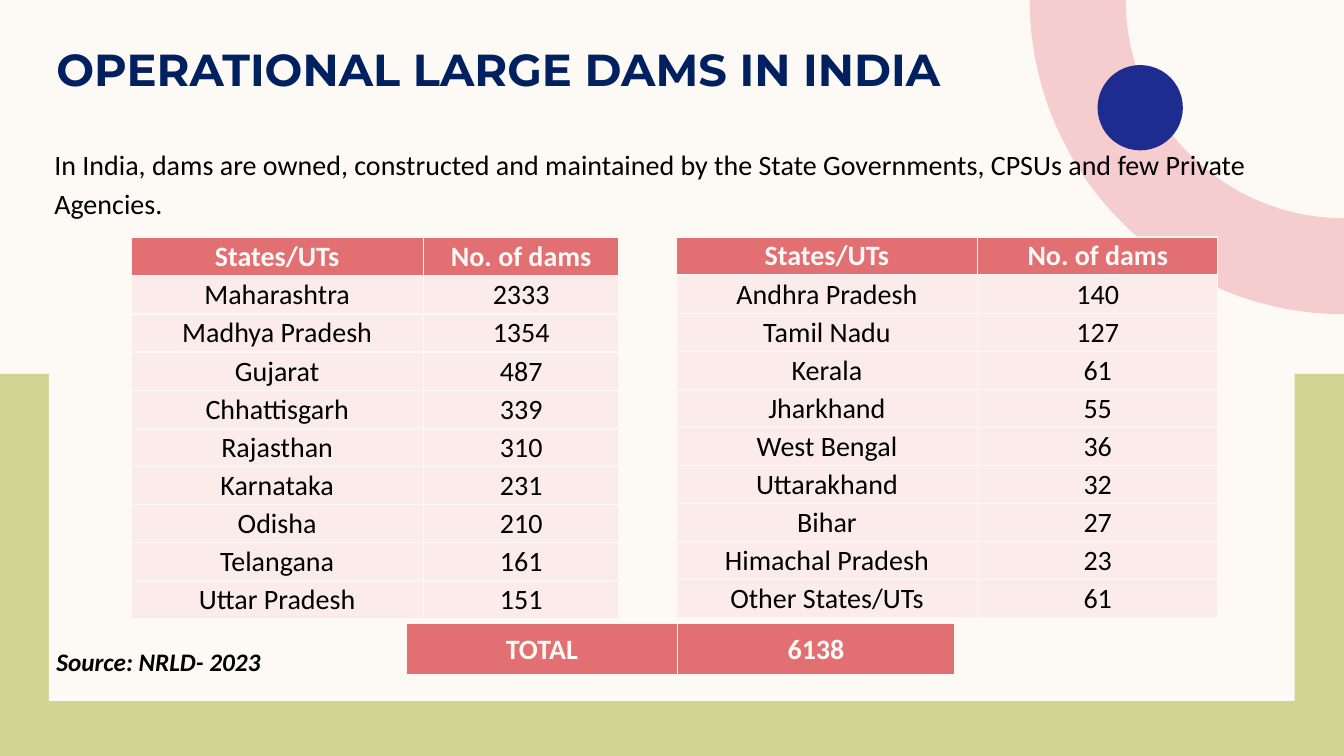
import math

from lxml import etree
from pptx import Presentation
from pptx.dml.color import RGBColor
from pptx.enum import shapes, text
from pptx.oxml import ns
from pptx.util import Cm, Pt

CREAM, CORAL, BLUSH = "FDFAF6", "E26F72", "FBEBEB"
OLIVE, PINK, BLUE, NAVY, BLACK = "D2D592", "F5CDCE", "1F2C8F", "002060", "000000"
WIDTH, HEIGHT = 33.87, 19.05
HEADINGS = ("States/UTs", "No. of dams")
LARGEST_STATES = [
    ("Maharashtra", "2333"), ("Madhya Pradesh", "1354"), ("Gujarat", "487"),
    ("Chhattisgarh", "339"), ("Rajasthan", "310"), ("Karnataka", "231"),
    ("Odisha", "210"), ("Telangana", "161"), ("Uttar Pradesh", "151"),
]
OTHER_STATES = [
    ("Andhra Pradesh", "140"), ("Tamil Nadu", "127"), ("Kerala", "61"),
    ("Jharkhand", "55"), ("West Bengal", "36"), ("Uttarakhand", "32"),
    ("Bihar", "27"), ("Himachal Pradesh", "23"), ("Other States/UTs", "61"),
]


def paint(color_format, color):
    """Fill a shape, cell, background or font with a hex colour."""
    if hasattr(color_format, "solid"):
        color_format.solid()
        color_format = color_format.fore_color
    color_format.rgb = RGBColor.from_string(color)


def finish(shape, color):
    """Give a decorative shape a flat fill without outline or shadow."""
    paint(shape.fill, color)
    shape.line.fill.background()
    shape.shadow.inherit = False


def add_preset(slide, kind, box, color):
    """Add a flat preset shape."""
    finish(slide.shapes.add_shape(kind, *map(Cm, box)), color)


def add_quarter_ring(slide, outer, inner, color):
    """Add a quarter ring centred on the top right corner of the slide."""
    def arc(radius, angles):
        return [(Cm(WIDTH - radius * math.cos(math.radians(a))),
                 Cm(radius * math.sin(math.radians(a)))) for a in angles]

    outline = arc(outer, range(0, 91, 2)) + arc(inner, range(90, -1, -2))
    ring = slide.shapes.build_freeform(*outline[0], scale=1.0)
    ring.add_line_segments(outline[1:], close=True)
    finish(ring.convert_to_shape(), color)


def style(paragraph, size, color, face="Calibri", bold=False, italic=False):
    """Set the font of a whole paragraph."""
    font = paragraph.font
    font.name, font.size, font.bold, font.italic = face, Pt(size), bold, italic
    paint(font.color, color)


def add_label(slide, box, words, size, color, spacing=1.0,
              anchor=text.MSO_ANCHOR.TOP, **font):
    """Add a wrapped text box with one paragraph."""
    frame = slide.shapes.add_textbox(*map(Cm, box)).text_frame
    frame.word_wrap = True
    frame.vertical_anchor = anchor
    paragraph = frame.paragraphs[0]
    paragraph.text = words
    paragraph.line_spacing = spacing
    style(paragraph, size, color, **font)


def add_borders(cell, color, bottom):
    """Draw the four borders of a cell."""
    properties = cell._tc.get_or_add_tcPr()
    for index, side in enumerate("LRTB"):
        border = etree.Element(ns.qn(f"a:ln{side}"),
                               w=str(Pt(bottom if side == "B" else 1)))
        fill = etree.SubElement(border, ns.qn("a:solidFill"))
        etree.SubElement(fill, ns.qn("a:srgbClr"), val=color)
        properties.insert(index, border)


def fill_cell(cell, words, is_heading, bottom):
    """Write and format one table cell."""
    cell.margin_left = cell.margin_right = cell.margin_top = Cm(0.02)
    cell.margin_bottom = 0
    cell.vertical_anchor = text.MSO_ANCHOR.MIDDLE
    paint(cell.fill, CORAL if is_heading else BLUSH)
    add_borders(cell, CREAM, bottom)
    paragraph = cell.text_frame.paragraphs[0]
    paragraph.text = words
    paragraph.alignment = text.PP_ALIGN.CENTER
    style(paragraph, 20, CREAM if is_heading else BLACK, bold=is_heading)


def add_dam_table(slide, left, top, widths, row_height, rows, bottom=1):
    """Add a two-column table whose first row is a heading."""
    table = slide.shapes.add_table(
        len(rows), len(widths), Cm(left), Cm(top),
        Cm(sum(widths)), Cm(row_height * len(rows))).table
    table.horz_banding = False
    for column, width in zip(table.columns, widths):
        column.width = Cm(width)
    for r, row in enumerate(rows):
        table.rows[r].height = Cm(row_height)
        for c, words in enumerate(row):
            fill_cell(table.cell(r, c), words, r == 0, bottom)


def add_backdrop(slide):
    """Draw the olive frame, the ring and the dot."""
    paint(slide.background.fill, CREAM)
    rectangle = shapes.MSO_SHAPE.RECTANGLE
    add_preset(slide, rectangle, (0, 9.42, WIDTH, HEIGHT - 9.42), OLIVE)
    add_preset(slide, rectangle, (1.23, 0.91, 31.4, 16.75), CREAM)
    add_quarter_ring(slide, 7.92, 5.5, PINK)
    add_preset(slide, shapes.MSO_SHAPE.OVAL, (27.66, 1.64, 2.15, 2.15), BLUE)


def main():
    """Build the slide on operational large dams."""
    deck = Presentation()
    deck.slide_width, deck.slide_height = Cm(WIDTH), Cm(HEIGHT)
    slide = deck.slides.add_slide(deck.slide_layouts[6])
    add_backdrop(slide)
    add_label(slide, (1.17, 16.15, 7.92, 1.03), "Source: NRLD- 2023",
              18, BLACK, bold=True, italic=True)
    add_dam_table(slide, 3.3, 5.99, (7.37, 4.93), 0.96,
                  [HEADINGS, *LARGEST_STATES])
    add_dam_table(slide, 17.04, 5.97, (7.6, 6.05), 0.96,
                  [HEADINGS, *OTHER_STATES])
    add_dam_table(slide, 10.24, 15.7, (6.83, 6.99), 1.32,
                  [("TOTAL", "6138")], bottom=3)
    add_label(slide, (1.12, 3.48, 31.83, 2.21),
              "In India, dams are owned, constructed and maintained by the "
              "State Governments, CPSUs and few Private Agencies.",
              20, BLACK, spacing=1.14)
    add_label(slide, (1.17, 0.58, 27.28, 2.31),
              "OPERATIONAL LARGE DAMS IN INDIA", 32, NAVY,
              anchor=text.MSO_ANCHOR.MIDDLE, face="Montserrat", bold=True)
    deck.save("out.pptx")


if __name__ == "__main__":
    main()
